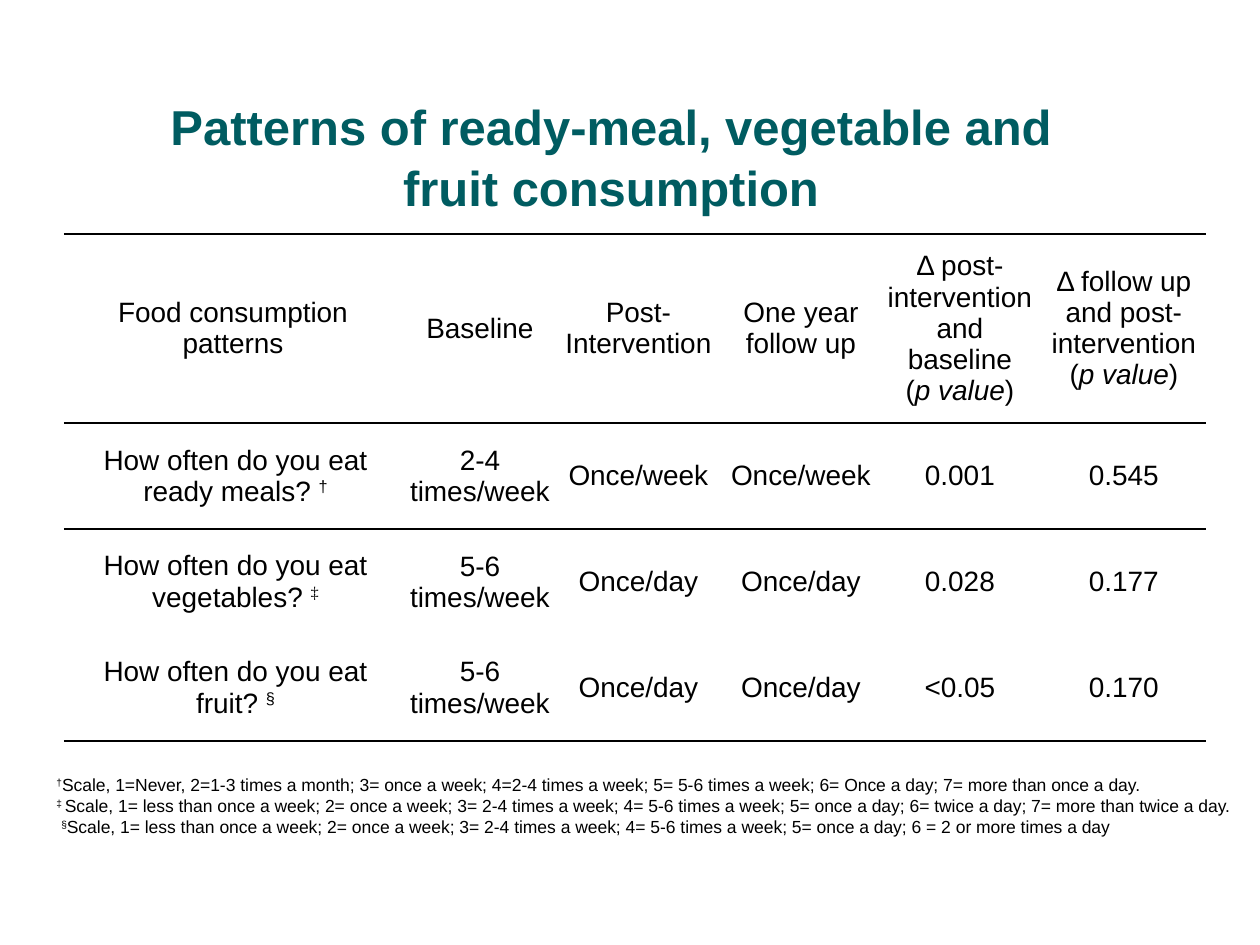
import dataclasses

import lxml.etree
import pptx
import pptx.dml.color
import pptx.enum.text
import pptx.oxml.ns
import pptx.util

PX_PER_INCH = 126
INK, TEAL, WHITE = "000000", "005C61", "FFFFFF"
NO_STYLE = "{2D5ABB26-0587-4C30-8999-92F81FD0307C}"
CENTER = pptx.enum.text.PP_ALIGN.CENTER
MIDDLE = pptx.enum.text.MSO_ANCHOR.MIDDLE


@dataclasses.dataclass(frozen=True)
class Span:
    text: str
    italic: bool = False
    raised: bool = False
    font: str = ""


P_VALUE = (Span("("), Span("p value", italic=True), Span(")"))
COLUMN_WIDTHS = (338, 151, 166, 159, 159, 169)
ROW_HEIGHTS = (189, 106, 106, 106)
ROWS = (
    (
        "Food consumption patterns", "Baseline", "Post-Intervention", "One year follow up",
        (Span("Δ post-intervention and baseline\v"), *P_VALUE),
        (Span("Δ follow up and post-intervention "), *P_VALUE),
    ),
    (
        (Span("How often do you eat ready meals? "), Span("†", raised=True)),
        "2-4 times/week", "Once/week", "Once/week", "0.001", "0.545",
    ),
    (
        (Span("How often do you eat vegetables? "),
         Span("‡", raised=True, font="Times New Roman")),
        "5-6 times/week", "Once/day", "Once/day", "0.028", "0.177",
    ),
    (
        (Span("How often do you eat fruit? "), Span("§", raised=True)),
        "5-6 times/week", "Once/day", "Once/day", "<0.05", "0.170",
    ),
)
FOOTNOTES = (
    (Span("†", raised=True),
     Span("Scale, 1=Never, 2=1-3 times a month; 3= once a week; 4=2-4 times a week; "
          "5= 5-6 times a week; 6= Once a day; 7= more than once a day.")),
    (Span("‡ ", raised=True),
     Span("Scale, 1= less than once a week; 2= once a week; 3= 2-4 times a week; "
          "4= 5-6 times a week; 5= once a day; 6= twice a day; 7= more than twice a day.")),
    (Span(" "), Span("§", raised=True),
     Span("Scale, 1= less than once a week; 2= once a week; 3= 2-4 times a week; "
          "4= 5-6 times a week; 5= once a day; 6 = 2 or more times a day")),
)


def px(length: int) -> int:
    return pptx.util.Emu(round(length * 914400 / PX_PER_INCH))


def color(value: str) -> pptx.dml.color.RGBColor:
    return pptx.dml.color.RGBColor.from_string(value)


def set_font(para, size: int, ink: str = INK, bold: bool = False) -> None:
    para.font.name = "Arial"
    para.font.size = pptx.util.Pt(size)
    para.font.bold = bold
    para.font.color.rgb = color(ink)


def write_spans(para, spans: tuple[Span, ...], size: int) -> None:
    for span in spans:
        if span.text.endswith("\v"):
            para.add_run().text = span.text[:-1]
            para.add_line_break()
            continue
        run = para.add_run()
        run.text = span.text
        if span.italic:
            run.font.italic = True
        if span.font:
            run.font.name = span.font
        if span.raised:
            run.font._element.set("baseline", "30000")
    set_font(para, size)


def add_border(cell, side: str, position: int) -> None:
    """Insert a 1 pt rule; borders must come before the fill in the cell properties."""
    properties = cell._tc.get_or_add_tcPr()
    line = lxml.etree.Element(pptx.oxml.ns.qn(f"a:{side}"), w="12700")
    fill = lxml.etree.SubElement(line, pptx.oxml.ns.qn("a:solidFill"))
    lxml.etree.SubElement(fill, pptx.oxml.ns.qn("a:srgbClr"), val=INK)
    properties.insert(position, line)


def fill_cell(cell, content: str | tuple[Span, ...], indent: int) -> None:
    cell.margin_left = cell.margin_right = cell.margin_top = cell.margin_bottom = 0
    cell.vertical_anchor = MIDDLE
    cell.fill.solid()
    cell.fill.fore_color.rgb = color(WHITE)
    para = cell.text_frame.paragraphs[0]
    para.alignment = CENTER
    para.space_after = pptx.util.Pt(10)
    para._p.get_or_add_pPr().set("marL", str(px(indent)))
    write_spans(para, (Span(content),) if isinstance(content, str) else content, 16)


def add_title(slide) -> None:
    title = slide.shapes.title
    title.left, title.top, title.width, title.height = px(105), px(76), px(1012), px(158)
    frame = title.text_frame
    frame.text = "Patterns of ready-meal, vegetable and fruit consumption"
    frame.word_wrap = True
    frame.auto_size = pptx.enum.text.MSO_AUTO_SIZE.NONE
    frame.vertical_anchor = MIDDLE
    para = frame.paragraphs[0]
    para.alignment = CENTER
    para.line_spacing = 1.05
    set_font(para, 28, TEAL, bold=True)


def add_consumption_table(slide) -> None:
    table = slide.shapes.add_table(
        len(ROWS), len(COLUMN_WIDTHS), px(64), px(234),
        px(sum(COLUMN_WIDTHS)), px(sum(ROW_HEIGHTS)),
    ).table
    table.first_row = table.horz_banding = False
    table._tbl.tblPr.find(pptx.oxml.ns.qn("a:tableStyleId")).text = NO_STYLE
    for column, width in zip(table.columns, COLUMN_WIDTHS):
        column.width = px(width)
    for row, height in zip(table.rows, ROW_HEIGHTS):
        row.height = px(height)
    for r, contents in enumerate(ROWS):
        for c, content in enumerate(contents):
            cell = table.cell(r, c)
            fill_cell(cell, content, 0 if r == c == 0 else 5)
            if r in (0, 1):
                add_border(cell, "lnT", 0)
            if r in (0, len(ROWS) - 1):
                add_border(cell, "lnB", 1 if r == 0 else 0)


def add_footnotes(slide) -> None:
    box = slide.shapes.add_textbox(px(44), px(768), px(1240), px(76))
    frame = box.text_frame
    frame.word_wrap = True
    frame.vertical_anchor = MIDDLE
    for index, spans in enumerate(FOOTNOTES):
        para = frame.add_paragraph() if index else frame.paragraphs[0]
        write_spans(para, spans, 10)


def main() -> None:
    deck = pptx.Presentation()
    deck.slide_width, deck.slide_height = px(1260), px(945)
    slide = deck.slides.add_slide(deck.slide_layouts[5])
    add_title(slide)
    add_consumption_table(slide)
    add_footnotes(slide)
    deck.save("out.pptx")


if __name__ == "__main__":
    main()
